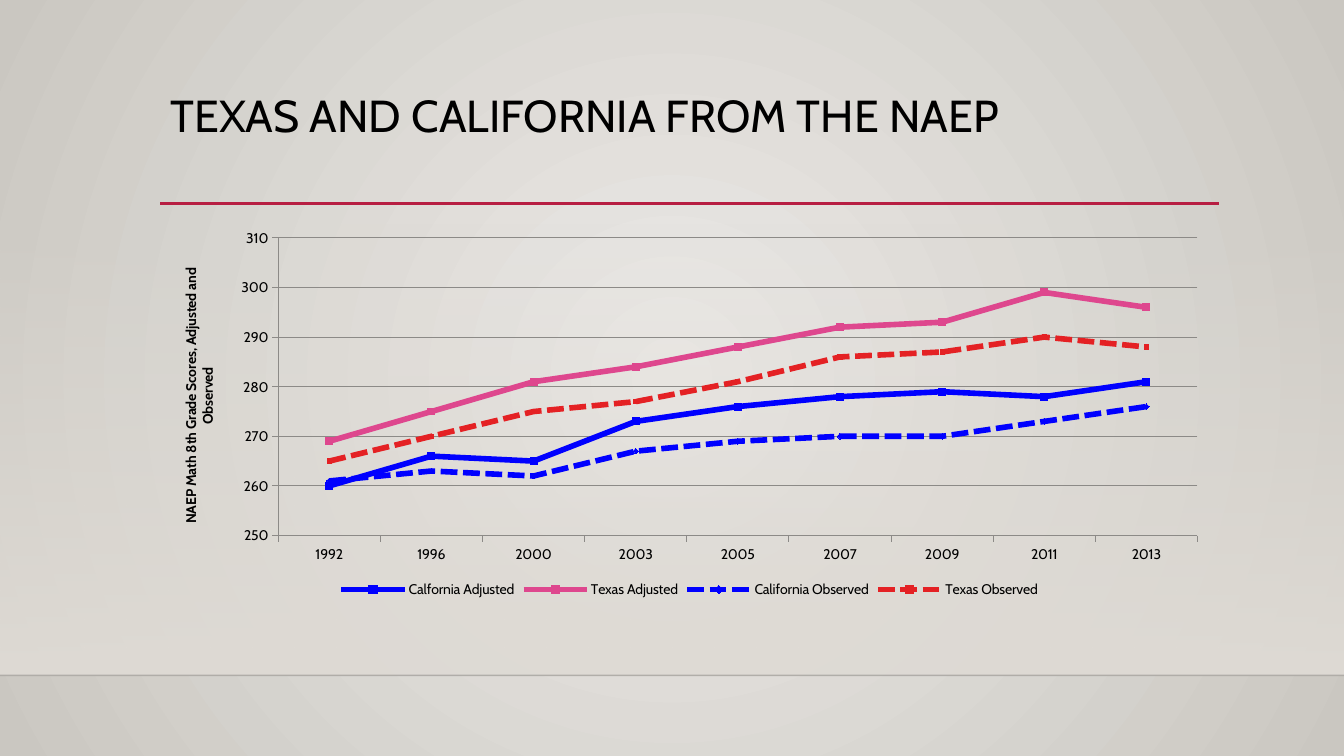
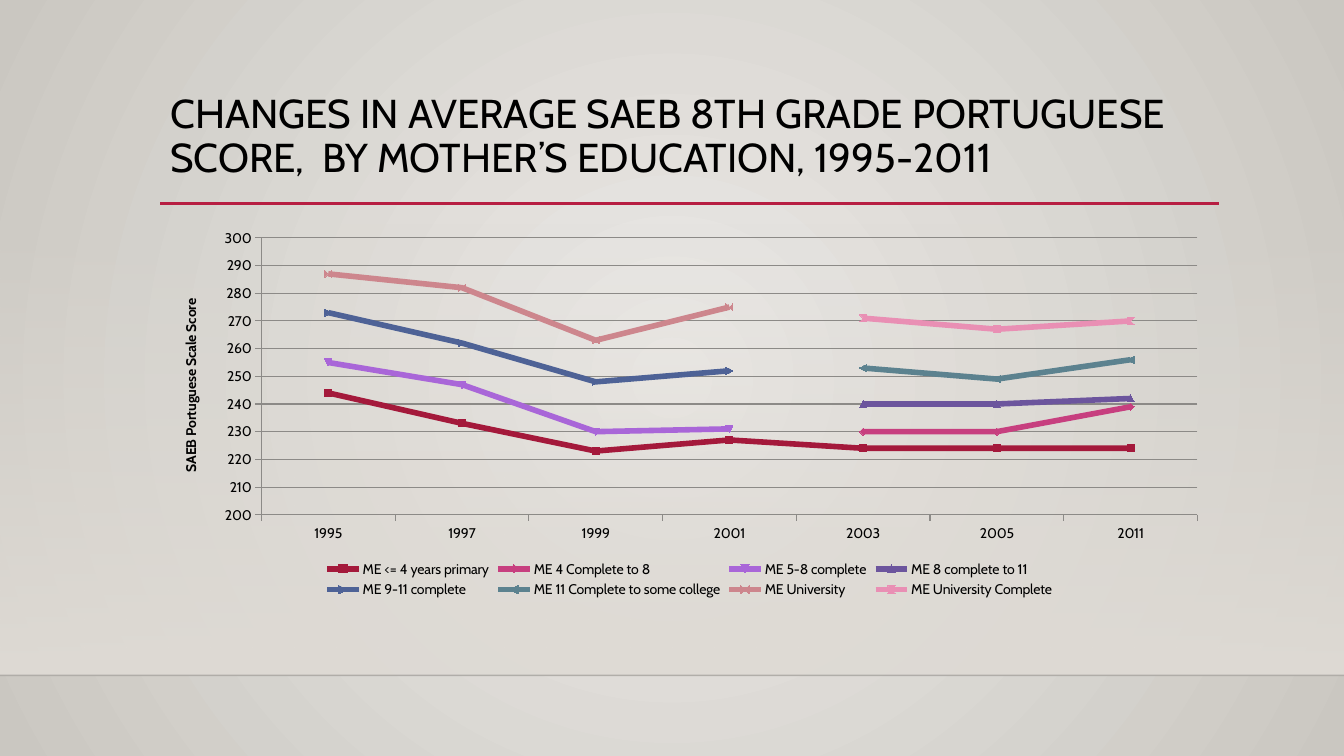
import lxml.etree
import pptx
import pptx.chart.data
import pptx.dml.color
import pptx.enum.chart
import pptx.enum.dml
import pptx.enum.shapes
import pptx.enum.text
import pptx.oxml.ns
import pptx.util

Pt = pptx.util.Pt
RGBColor = pptx.dml.color.RGBColor
qn = pptx.oxml.ns.qn

FONT = "Cabin"
SLIDE_WIDTH, SLIDE_HEIGHT = 960, 540
TITLE_BOX = (114.5, 63.5, 756, 82.5)
CHART_BOX = (114.5, 158.5, 756, 271.5)
FLOOR_TOP, FLOOR_BOTTOM = 159, 482.4
RULE_TOP = 145.3
SERIES_WIDTH = 4

BLACK = RGBColor(0x00, 0x00, 0x00)
GRID_GRAY = RGBColor(0x8C, 0x8A, 0x87)
WALL_LIGHT = RGBColor(0xEC, 0xEA, 0xE7)
WALL_DARK = RGBColor(0xCA, 0xC7, 0xC1)
FLOOR = RGBColor(0xDF, 0xDB, 0xD5)
RULE_RED = RGBColor(0xB7, 0x1E, 0x42)
BLUE = RGBColor(0x00, 0x00, 0xFF)
PINK = RGBColor(0xDE, 0x47, 0x8E)
RED = RGBColor(0xE4, 0x21, 0x24)
CRIMSON = RGBColor(0xA4, 0x19, 0x3B)
MAGENTA = RGBColor(0xC7, 0x3F, 0x7F)
VIOLET = RGBColor(0xA9, 0x66, 0xD8)
PURPLE = RGBColor(0x6C, 0x55, 0x9D)
NAVY = RGBColor(0x4E, 0x62, 0x96)
TEAL = RGBColor(0x5C, 0x82, 0x8F)
ROSE = RGBColor(0xCD, 0x86, 0x8D)
LIGHT_PINK = RGBColor(0xE9, 0x8F, 0xB4)

NO_SCORES = [None]

NAEP = {
    "title": "TEXAS AND CALIFORNIA FROM THE NAEP",
    "title_size": 32,
    "axis_title": "NAEP Math 8th Grade Scores, Adjusted and Observed",
    "scale": (250, 310),
    "years": [1992, 1996, 2000, 2003, 2005, 2007, 2009, 2011, 2013],
    "series": [
        ("Calfornia Adjusted", BLUE, False, [260, 266, 265, 273, 276, 278, 279, 278, 281]),
        ("Texas Adjusted", PINK, False, [269, 275, 281, 284, 288, 292, 293, 299, 296]),
        ("California Observed", BLUE, True, [261, 263, 262, 267, 269, 270, 270, 273, 276]),
        ("Texas Observed", RED, True, [265, 270, 275, 277, 281, 286, 287, 290, 288]),
    ],
    "markers": [("SQUARE", 5), ("SQUARE", 5), ("DIAMOND", 4), ("SQUARE", 3)],
}

SAEB = {
    "title": "CHANGES IN AVERAGE SAEB 8TH GRADE PORTUGUESE SCORE,  "
             "BY MOTHER’S EDUCATION, 1995-2011",
    "title_size": 28.8,
    "axis_title": "SAEB Portuguese Scale Score",
    "scale": (200, 300),
    "years": [1995, 1997, 1999, 2001, 2003, 2005, 2011],
    "series": [
        ("ME <= 4 years primary", CRIMSON, False, [244, 233, 223, 227, 224, 224, 224]),
        ("ME 4 Complete to 8", MAGENTA, False, NO_SCORES * 4 + [230, 230, 239]),
        ("ME 5-8 complete", VIOLET, False, [255, 247, 230, 231] + NO_SCORES * 3),
        ("ME 8 complete to 11", PURPLE, False, NO_SCORES * 4 + [240, 240, 242]),
        ("ME 9-11 complete", NAVY, False, [273, 262, 248, 252] + NO_SCORES * 3),
        ("ME 11 Complete to some college", TEAL, False, NO_SCORES * 4 + [253, 249, 256]),
        ("ME University", ROSE, False, [287, 282, 263, 275] + NO_SCORES * 3),
        ("ME University Complete", LIGHT_PINK, False, NO_SCORES * 4 + [271, 267, 270]),
    ],
    "markers": [],
}


def add_child(parent, tag, **attributes):
    """Append a DrawingML element with the given attributes."""
    child = lxml.etree.SubElement(parent, qn(tag))
    for name, value in attributes.items():
        child.set(name, str(value))
    return child


def set_gradient(fill, owner, stops):
    """Fill with (color, opacity percent) stops and return the gradient element."""
    fill.gradient()
    gradient = next(owner.iter(qn("a:gradFill")))
    for child in list(gradient):
        gradient.remove(child)
    stop_list = add_child(gradient, "a:gsLst")
    for index, (color, opacity) in enumerate(stops):
        stop = add_child(stop_list, "a:gs", pos=index * 100000)
        color_element = add_child(stop, "a:srgbClr", val=color)
        add_child(color_element, "a:alpha", val=opacity * 1000)
    return gradient


def add_line(slide, left, right, top, color, width):
    """Draw a horizontal line without a shadow."""
    line = slide.shapes.add_connector(
        pptx.enum.shapes.MSO_CONNECTOR.STRAIGHT, Pt(left), Pt(top), Pt(right), Pt(top))
    line.line.color.rgb = color
    line.line.width = Pt(width)
    add_child(line.element.spPr, "a:effectLst")
    return line


def decorate_master(master, slide):
    """Give the master its background, floor band and lines."""
    gradient = set_gradient(master.background.fill, master.element,
                            [(WALL_LIGHT, 100), (WALL_DARK, 100)])
    circle = add_child(gradient, "a:path", path="circle")
    add_child(circle, "a:fillToRect", l=50000, t=50000, r=50000, b=50000)

    floor = slide.shapes.add_shape(
        pptx.enum.shapes.MSO_SHAPE.RECTANGLE, 0, Pt(FLOOR_TOP),
        Pt(SLIDE_WIDTH), Pt(FLOOR_BOTTOM - FLOOR_TOP))
    floor.shadow.inherit = False
    floor.line.fill.background()
    gradient = set_gradient(floor.fill, floor.element, [(FLOOR, 0), (FLOOR, 100)])
    add_child(gradient, "a:lin", ang=5400000, scaled=0)

    floor_edge = add_line(slide, 0, SLIDE_WIDTH, FLOOR_BOTTOM, BLACK, 1)
    edge_color = next(floor_edge.element.spPr.iter(qn("a:srgbClr")))
    add_child(edge_color, "a:alpha", val=20000)
    left, _, width, _ = TITLE_BOX
    title_rule = add_line(slide, left, left + width, RULE_TOP, RULE_RED, 2.5)

    for index, shape in enumerate((floor, floor_edge, title_rule)):
        next(shape.element.iter(qn("p:cNvPr"))).set("id", str(100 + index))
        master.shapes.element.insert(2 + index, shape.element)


def place_title(title, box, text, size):
    """Place and format the slide title in its box."""
    title.left, title.top, title.width, title.height = map(Pt, box)
    frame = title.text_frame
    frame.text = text
    frame.word_wrap = True
    frame.auto_size = pptx.enum.text.MSO_AUTO_SIZE.NONE
    frame.vertical_anchor = pptx.enum.text.MSO_ANCHOR.TOP
    paragraph = frame.paragraphs[0]
    paragraph.alignment = pptx.enum.text.PP_ALIGN.LEFT
    paragraph.line_spacing = 0.9
    font = paragraph.runs[0].font
    font.name, font.size, font.color.rgb = FONT, Pt(size), BLACK


def format_axes(chart, axis_title, scale):
    """Format both axes, the gridlines and the value axis title."""
    for axis in (chart.category_axis, chart.value_axis):
        axis.major_tick_mark = pptx.enum.chart.XL_TICK_MARK.OUTSIDE
        axis.minor_tick_mark = pptx.enum.chart.XL_TICK_MARK.NONE
        axis.format.line.color.rgb = GRID_GRAY
        axis.format.line.width = Pt(0.75)
    values = chart.value_axis
    values.minimum_scale, values.maximum_scale = scale
    values.major_unit = 10
    values.has_major_gridlines = True
    values.major_gridlines.format.line.color.rgb = GRID_GRAY
    values.major_gridlines.format.line.width = Pt(0.75)
    values.tick_labels.number_format = "0"
    values.tick_labels.number_format_is_linked = False
    frame = values.axis_title.text_frame
    frame.text = axis_title
    font = frame.paragraphs[0].runs[0].font
    font.name, font.size, font.bold, font.color.rgb = FONT, Pt(10), True, BLACK


def place_chart(slide, box, content):
    """Add a line chart of scores by year in the box."""
    data = pptx.chart.data.CategoryChartData(number_format="0")
    data.categories = [str(year) for year in content["years"]]
    for name, _, _, scores in content["series"]:
        data.add_series(name, scores)
    chart = slide.shapes.add_chart(
        pptx.enum.chart.XL_CHART_TYPE.LINE_MARKERS, *map(Pt, box), data).chart
    chart.has_title = False
    chart.font.name, chart.font.size, chart.font.color.rgb = FONT, Pt(10), BLACK
    chart.has_legend = True
    chart.legend.position = pptx.enum.chart.XL_LEGEND_POSITION.BOTTOM
    chart.legend.include_in_layout = False
    plot = chart.plots[0]
    plot.vary_by_categories = False
    format_axes(chart, content["axis_title"], content["scale"])

    for series, (_, color, dashed, _) in zip(plot.series, content["series"]):
        series.smooth = False
        series.format.line.color.rgb = color
        series.format.line.width = Pt(SERIES_WIDTH)
        if dashed:
            series.format.line.dash_style = pptx.enum.dml.MSO_LINE.SQUARE_DOT
        series.marker.size = 5
        series.marker.format.fill.solid()
        series.marker.format.fill.fore_color.rgb = color
        series.marker.format.line.color.rgb = color
    for series, (style, size) in zip(plot.series, content["markers"]):
        series.marker.style = pptx.enum.chart.XL_MARKER_STYLE[style]
        series.marker.size = size


def add_chart_slide(presentation, layout, content):
    """Add a slide with a title above a line chart."""
    slide = presentation.slides.add_slide(layout)
    place_title(slide.shapes.title, TITLE_BOX, content["title"], content["title_size"])
    place_chart(slide, CHART_BOX, content)
    return slide


def main():
    """Build and save the presentation."""
    presentation = pptx.Presentation()
    presentation.slide_width, presentation.slide_height = Pt(SLIDE_WIDTH), Pt(SLIDE_HEIGHT)
    layout = presentation.slide_layouts.get_by_name("Title Only")
    slides = [add_chart_slide(presentation, layout, content) for content in (NAEP, SAEB)]
    decorate_master(presentation.slide_master, slides[0])
    presentation.save("out.pptx")


if __name__ == "__main__":
    main()
